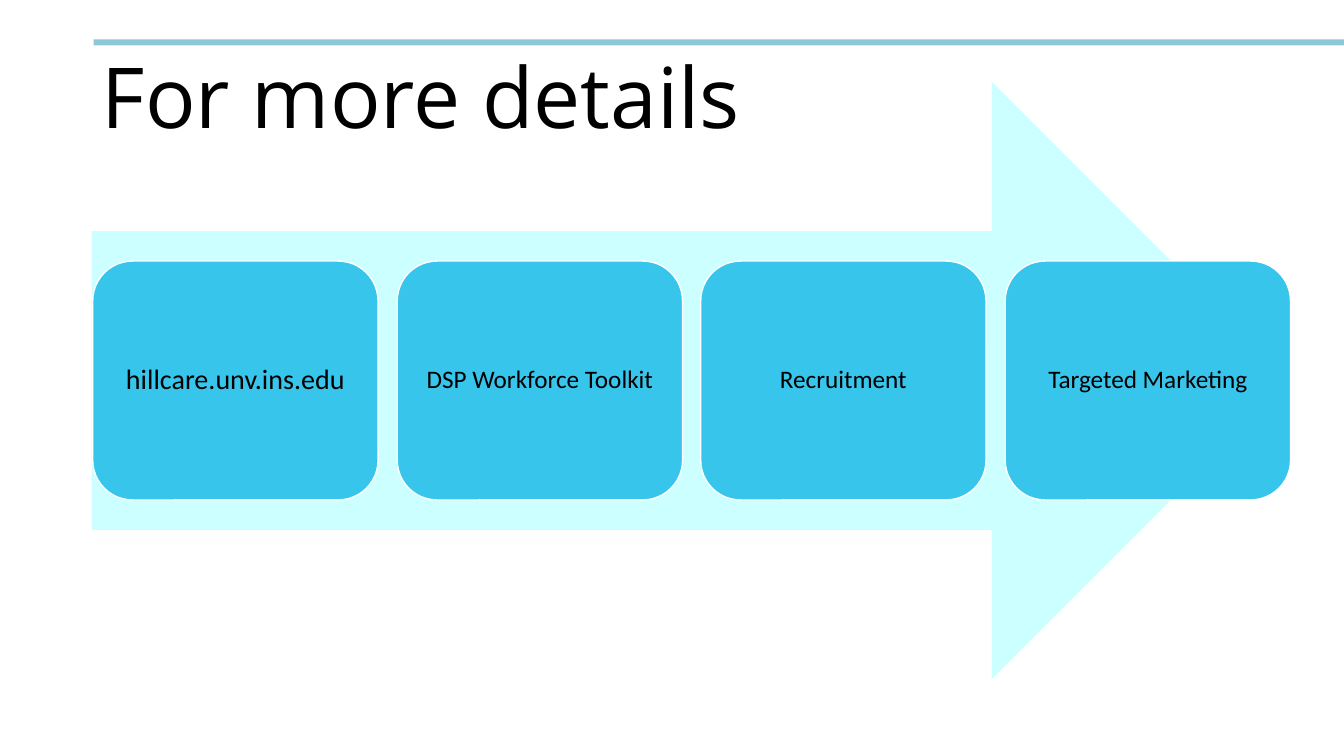
import pptx
import pptx.util
import pptx.dml.color
import pptx.enum.shapes
import pptx.enum.text

Inches = pptx.util.Inches
Pt = pptx.util.Pt
Kind = pptx.enum.shapes.MSO_SHAPE
Align = pptx.enum.text.PP_ALIGN
Anchor = pptx.enum.text.MSO_ANCHOR

hues = {"rule": "8EC7D7", "arrow": "CCFFFF", "step": "38C5EC",
        "edge": "FFFFFF", "text": "000000"}


def paint(kind, box, hue):
    """Add a flat filled shape without outline."""
    shape = slide.shapes.add_shape(kind, *map(Inches, box))
    shape.shadow.inherit = False
    shape.fill.solid()
    shape.fill.fore_color.rgb = pptx.dml.color.RGBColor.from_string(hues[hue])
    shape.line.fill.background()
    return shape


def write(shape, text, font, size, align, anchor, inset):
    """Set one line of text with its font and frame format."""
    frame = shape.text_frame
    frame.text = text
    look = {"word_wrap": True, "vertical_anchor": anchor,
            "auto_size": pptx.enum.text.MSO_AUTO_SIZE.NONE}
    if inset is not None:
        for side in ("left", "top", "right", "bottom"):
            look["margin_" + side] = Inches(inset)
    for name, value in look.items():
        setattr(frame, name, value)
    para = frame.paragraphs[0]
    for name, value in {"alignment": align, "line_spacing": 0.9}.items():
        setattr(para, name, value)
    run = para.runs[0]
    for name, value in {"name": font, "size": Pt(size)}.items():
        setattr(run.font, name, value)
    run.font.color.rgb = pptx.dml.color.RGBColor.from_string(hues["text"])


deck = pptx.Presentation()
deck.slide_width = Inches(13.33)
deck.slide_height = Inches(7.5)
slide = deck.slides.add_slide(deck.slide_layouts[5])

paint(Kind.RECTANGLE, (0.93, 0.39, 12.4, 0.06), "rule")

title = slide.shapes.title
place = {"left": 0.91, "top": 0.48, "width": 11.5, "height": 1.03}
for name, value in place.items():
    setattr(title, name, Inches(value))
write(title, "For more details", "Open Sans", 60, Align.LEFT, Anchor.BOTTOM, None)

paint(Kind.RIGHT_ARROW, (0.91, 0.81, 11.89, 5.93), "arrow")

steps = [("hillcare.unv.ins.edu", 20, 0.08), ("DSP Workforce Toolkit", 18, 0.07),
         ("Recruitment", 18, 0.07), ("Targeted Marketing", 18, 0.07)]
left, pitch = 0.92, 3.017
for i, (text, size, inset) in enumerate(steps):
    step = paint(Kind.ROUNDED_RECTANGLE,
                 (round(left + i * pitch, 2), 2.59, 2.83, 2.37), "step")
    step.line.color.rgb = pptx.dml.color.RGBColor.from_string(hues["edge"])
    step.line.width = Pt(1)
    write(step, text, "Calibri", size, Align.CENTER, Anchor.MIDDLE, inset)

deck.save("out.pptx")
